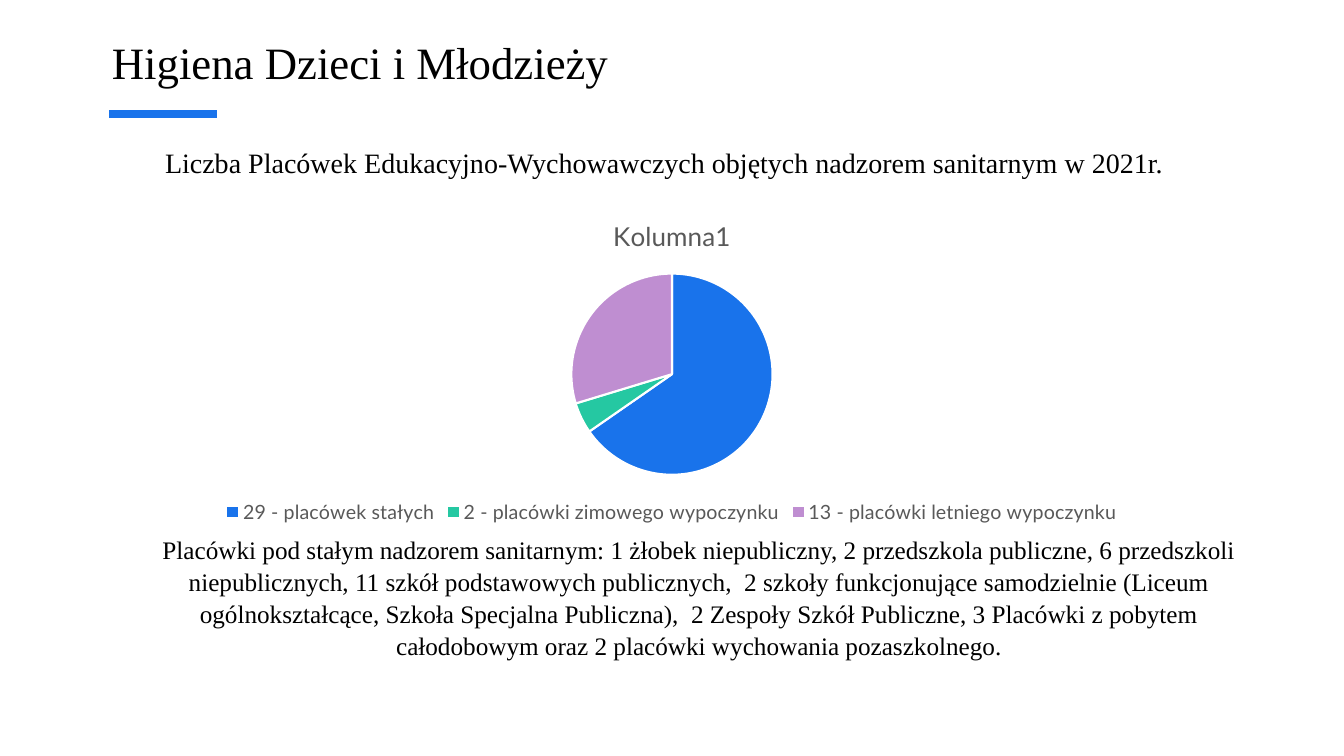
import pptx
import pptx.chart.data
import pptx.dml.color
import pptx.enum.chart
import pptx.enum.shapes
import pptx.enum.text
import pptx.oxml
import pptx.util

Pt = pptx.util.Pt
RGBColor = pptx.dml.color.RGBColor
PP_ALIGN = pptx.enum.text.PP_ALIGN

BLACK = RGBColor(0x00, 0x00, 0x00)
WHITE = RGBColor(0xFF, 0xFF, 0xFF)
GREY = RGBColor(0x59, 0x59, 0x59)
BLUE = RGBColor(0x19, 0x73, 0xEB)
GREEN = RGBColor(0x25, 0xC8, 0xA2)
VIOLET = RGBColor(0xBF, 0x8E, 0xD1)

TEXT_FONT = "Times New Roman"
CHART_FONT = "Lato"

HEADING = "Higiena Dzieci i Młodzieży"
SUBTITLE = (
    "Liczba Placówek Edukacyjno-Wychowawczych objętych nadzorem "
    "sanitarnym w 2021r."
)
SUMMARY = (
    "Placówki pod stałym nadzorem sanitarnym: 1 żłobek niepubliczny, "
    "2 przedszkola publiczne, 6 przedszkoli niepublicznych, "
    "11 szkół podstawowych publicznych,  2 szkoły funkcjonujące samodzielnie "
    "(Liceum ogólnokształcące, Szkoła Specjalna Publiczna),  "
    "2 Zespoły Szkół Publiczne, 3 Placówki z pobytem całodobowym "
    "oraz 2 placówki wychowania pozaszkolnego."
)
FACILITIES = [
    ("29 - placówek stałych", 66, BLUE),
    ("2 - placówki zimowego wypoczynku", 5, GREEN),
    ("13 - placówki letniego wypoczynku", 30, VIOLET),
]


def set_font(font, name, size, color):
    font.name = name
    font.size = Pt(size)
    font.bold = False
    font.color.rgb = color


def write_text(shape, text, size, align):
    frame = shape.text_frame
    frame.word_wrap = True
    frame.auto_size = pptx.enum.text.MSO_AUTO_SIZE.NONE
    frame.vertical_anchor = pptx.enum.text.MSO_ANCHOR.TOP
    paragraph = frame.paragraphs[0]
    paragraph.text = text
    paragraph.alignment = align
    paragraph.line_spacing = 1.05
    set_font(paragraph.font, TEXT_FONT, size, BLACK)


def add_heading(slide, left, top, width, height):
    heading = slide.shapes.title
    heading.left, heading.top = Pt(left), Pt(top)
    heading.width, heading.height = Pt(width), Pt(height)
    write_text(heading, HEADING, 32, PP_ALIGN.LEFT)


def add_centred_text(slide, text, size, left, top, width, height):
    box = slide.shapes.add_textbox(Pt(left), Pt(top), Pt(width), Pt(height))
    write_text(box, text, size, PP_ALIGN.CENTER)


def add_accent_rule(slide, left, right, y):
    rule = slide.shapes.add_connector(
        pptx.enum.shapes.MSO_CONNECTOR.STRAIGHT, Pt(left), Pt(y), Pt(right), Pt(y)
    )
    rule.line.color.rgb = BLUE
    rule.line.width = Pt(6)
    # An empty effect list switches the theme shadow off
    rule.element.spPr.append(pptx.oxml.parse_xml(
        '<a:effectLst xmlns:a="http://schemas.openxmlformats.org/drawingml/2006/main"/>'
    ))


def add_facilities_pie(slide, left, top, width, height):
    labels, shares, colors = zip(*FACILITIES)
    data = pptx.chart.data.CategoryChartData()
    data.categories = labels
    data.add_series("Kolumna1", shares)
    pie = slide.shapes.add_chart(
        pptx.enum.chart.XL_CHART_TYPE.PIE,
        Pt(left), Pt(top), Pt(width), Pt(height), data,
    ).chart
    set_font(pie.font, CHART_FONT, 10, BLACK)

    # Title and legend
    pie.has_title = True
    caption = pie.chart_title.text_frame.paragraphs[0]
    caption.text = "Kolumna1"
    set_font(caption.font, CHART_FONT, 18.6, GREY)
    pie.chart_title.include_in_layout = False
    pie.has_legend = True
    pie.legend.position = pptx.enum.chart.XL_LEGEND_POSITION.BOTTOM
    pie.legend.include_in_layout = False
    set_font(pie.legend.font, CHART_FONT, 14, GREY)

    # Slices
    plot = pie.plots[0]
    plot.vary_by_categories = True
    for index, color in enumerate(colors):
        slice_format = plot.series[0].points[index].format
        slice_format.fill.solid()
        slice_format.fill.fore_color.rgb = color
        slice_format.line.color.rgb = WHITE
        slice_format.line.width = Pt(1.5)


def main():
    deck = pptx.Presentation()
    deck.slide_width, deck.slide_height = Pt(960), Pt(540)
    slide = deck.slides.add_slide(deck.slide_layouts.get_by_name("Title Only"))

    # Heading with its accent rule
    add_accent_rule(slide, 78, 155, 81.4)
    add_heading(slide, 72.7, 19.4, 816, 70)

    # Chart between its subtitle and the summary
    add_centred_text(slide, SUBTITLE, 20, 61.2, 99.4, 826.6, 76.3)
    add_facilities_pie(slide, 72, 143.3, 816, 234)
    add_centred_text(slide, SUMMARY, 18, 96.5, 377.3, 805.7, 116.6)

    deck.save("out.pptx")


if __name__ == "__main__":
    main()
